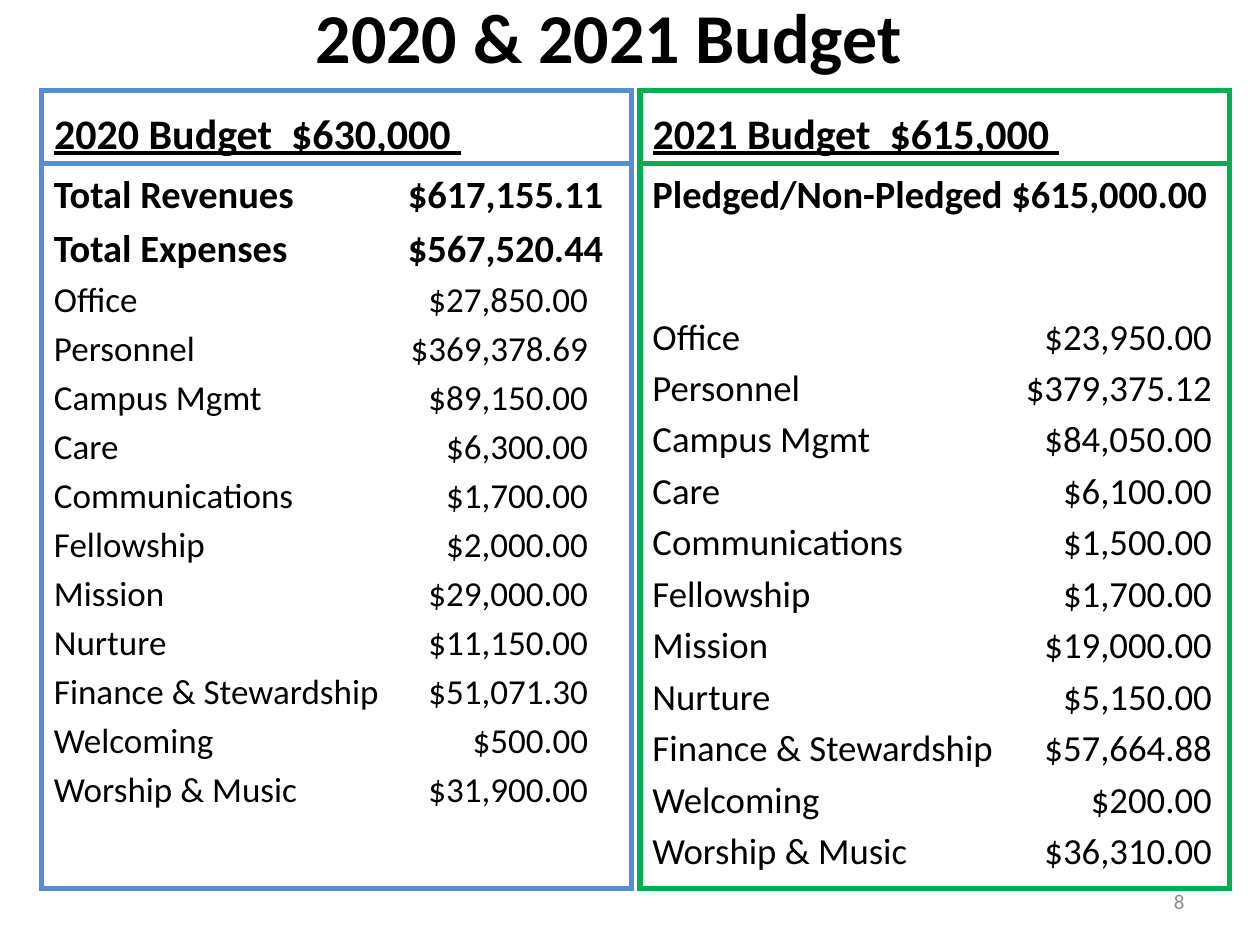
from dataclasses import dataclass

import pptx
import pptx.dml.color
import pptx.enum.text
import pptx.util
from lxml import etree
from pptx.oxml.ns import qn

Inches = pptx.util.Inches
Pt = pptx.util.Pt
Align = pptx.enum.text.PP_ALIGN
Anchor = pptx.enum.text.MSO_ANCHOR


@dataclass(frozen=True)
class Theme:
    font: str = "Calibri"
    ink: str = "000000"
    muted: str = "8C8C8C"
    blue: str = "558ED5"
    green: str = "00B050"
    title: int = 40
    heading: int = 24
    total: int = 22
    page: int = 12
    border: int = 3
    spacing: float = 0.2


THEME = Theme()

TOTALS_2020 = [("Total Revenues", "$617,155.11"), ("Total Expenses", "$567,520.44")]
TOTALS_2021 = [("Pledged/Non-Pledged", "$615,000.00")]
SPENDING = [
    ("Office", "$27,850.00", "$23,950.00"),
    ("Personnel", "$369,378.69", "$379,375.12"),
    ("Campus Mgmt", "$89,150.00", "$84,050.00"),
    ("Care", "$6,300.00", "$6,100.00"),
    ("Communications", "$1,700.00", "$1,500.00"),
    ("Fellowship", "$2,000.00", "$1,700.00"),
    ("Mission", "$29,000.00", "$19,000.00"),
    ("Nurture", "$11,150.00", "$5,150.00"),
    ("Finance & Stewardship", "$51,071.30", "$57,664.88"),
    ("Welcoming", "$500.00", "$200.00"),
    ("Worship & Music", "$31,900.00", "$36,310.00"),
]


def place(shape, left, top, width, height, anchor):
    shape.left, shape.top = Inches(left), Inches(top)
    shape.width, shape.height = Inches(width), Inches(height)
    frame = shape.text_frame
    frame.word_wrap = True
    frame.auto_size = pptx.enum.text.MSO_AUTO_SIZE.NONE
    frame.vertical_anchor = anchor
    return frame


def write(paragraph, text, *, size, color=THEME.ink, bold=False, underline=False,
          align=Align.LEFT, before=None, tab=None):
    """Fill a paragraph; tab is a right-aligned stop in inches."""
    paragraph.alignment = align
    if before is not None:
        paragraph.space_before = Pt(before)
    if tab:
        stops = etree.SubElement(paragraph._p.get_or_add_pPr(), qn("a:tabLst"))
        etree.SubElement(stops, qn("a:tab"), pos=str(Inches(tab)), algn="r")
    run = paragraph.add_run()
    run.text = text
    font = run.font
    font.name, font.size = THEME.font, Pt(size)
    font.bold, font.underline = bold, underline
    font.color.rgb = pptx.dml.color.RGBColor.from_string(color)


def outline(shape, color):
    """Give the shape a sharp-cornered border and no fill."""
    shape.fill.background()
    shape.line.color.rgb = pptx.dml.color.RGBColor.from_string(color)
    shape.line.width = Pt(THEME.border)
    border = shape._element.spPr.find(qn("a:ln"))
    etree.SubElement(border, qn("a:miter"), lim="800000")


def add_budget(slide, heading, box, *, title, totals, spending, color, size,
               total_tab, amount_tab, gap=None):
    """Heading above a ledger; gap is the space in points before the spending rows."""
    left, top, width, height = box
    heading_height = 0.58
    outline(heading, color)
    frame = place(heading, left, top, width, heading_height, Anchor.BOTTOM)
    write(frame.paragraphs[0], title, size=THEME.heading, bold=True, underline=True)

    ledger = slide.shapes.add_textbox(0, 0, 0, 0)
    outline(ledger, color)
    frame = place(ledger, left, top + heading_height, width,
                  height - heading_height, Anchor.TOP)
    rows = [(row, dict(size=THEME.total, bold=True, tab=total_tab)) for row in totals]
    rows += [(row, dict(size=size, tab=amount_tab)) for row in spending]
    for number, (row, style) in enumerate(rows):
        paragraph = frame.add_paragraph() if number else frame.paragraphs[0]
        before = THEME.spacing * style["size"]
        if gap and number == len(totals):
            before = gap
        write(paragraph, "\t".join(row), before=before, **style)


def add_title(title, box):
    frame = place(title, *box, Anchor.MIDDLE)
    write(frame.paragraphs[0], "2020 & 2021 Budget", size=THEME.title, bold=True,
          align=Align.CENTER)


def add_page_number(slide, box):
    number = slide.shapes.add_textbox(0, 0, 0, 0)
    frame = place(number, *box, Anchor.MIDDLE)
    write(frame.paragraphs[0], "8", size=THEME.page, color=THEME.muted, align=Align.RIGHT)


def main():
    deck = pptx.Presentation()
    deck.slide_width, deck.slide_height = Inches(10), Inches(7.5)
    comparison = deck.slide_layouts[4]
    slide = deck.slides.add_slide(comparison)
    title, heading_2020, list_2020, heading_2021, list_2021 = slide.placeholders
    # Ledgers are text boxes: the list placeholders' hanging indent overrides tab stops.
    for unused in (list_2020, list_2021):
        unused.element.getparent().remove(unused.element)

    add_title(title, (0.33, 0.02, 9, 0.53))
    add_budget(slide, heading_2020, (0.33, 0.72, 4.68, 6.33),
               title="2020 Budget  $630,000 ", totals=TOTALS_2020,
               spending=[(item, past) for item, past, _ in SPENDING],
               color=THEME.blue, size=20, total_tab=4.36, amount_tab=4.24)
    add_budget(slide, heading_2021, (5.08, 0.72, 4.68, 6.33),
               title="2021 Budget  $615,000 ", totals=TOTALS_2021,
               spending=[(item, planned) for item, _, planned in SPENDING],
               color=THEME.green, size=21, total_tab=4.4, amount_tab=4.44, gap=55.5)
    add_page_number(slide, (7.17, 6.95, 2.33, 0.4))
    deck.save("out.pptx")


if __name__ == "__main__":
    main()
